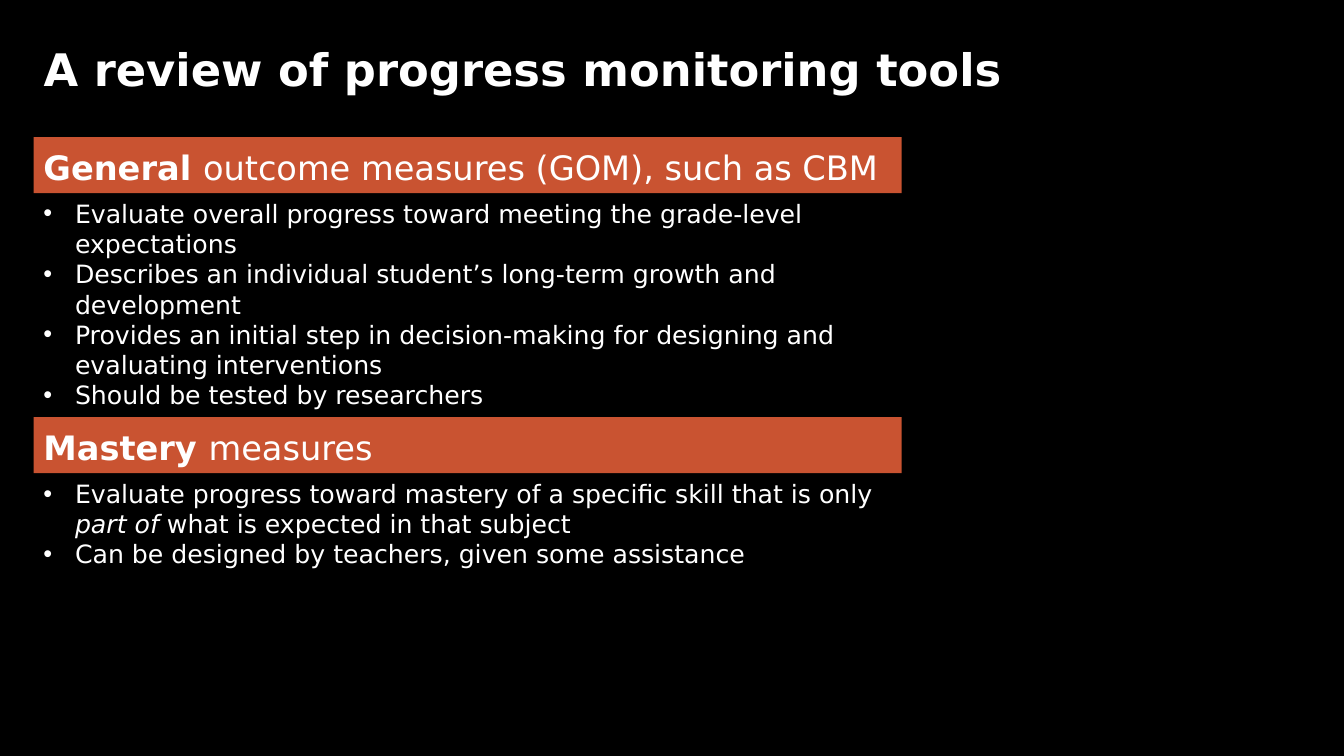
import pptx
import pptx.dml.color
import pptx.enum.shapes
import pptx.enum.text
import pptx.oxml.ns
import pptx.util
from lxml import etree

Pt = pptx.util.Pt
ANCHOR = pptx.enum.text.MSO_ANCHOR

FONT = "DejaVu Sans"
WHITE, BLACK, RUST = "FFFFFF", "000000", "C95331"
LEFT = 24
SECTION_WIDTH = 620
HEADING_HEIGHT = 40
BULLET_INDENT = 22.5

# Each section: heading, height of its bullet list, bullets.
# A text is a list of (words, style) runs.
SECTIONS = [
    ([("General ", "bold"), ("outcome measures (GOM), such as CBM", "")], 160, [
        [("Evaluate overall progress toward meeting the grade-level expectations", "")],
        [("Describes an individual student’s long-term growth and development", "")],
        [("Provides an initial step in decision-making for designing and evaluating interventions", "")],
        [("Should be tested by researchers", "")],
    ]),
    ([("Mastery ", "bold"), ("measures", "")], 73, [
        [("Evaluate progress toward mastery of a specific skill that is only ", ""),
         ("part of ", "italic"), ("what is expected in that subject", "")],
        [("Can be designed by teachers, given some assistance", "")],
    ]),
]


def color(hex_string):
    return pptx.dml.color.RGBColor.from_string(hex_string)


def add_bullet(paragraph):
    properties = paragraph._p.get_or_add_pPr()
    properties.set("marL", str(Pt(BULLET_INDENT)))
    properties.set("indent", str(-Pt(BULLET_INDENT)))
    for tag, name, value in (("a:buFont", "typeface", "Arial"), ("a:buChar", "char", "•")):
        etree.SubElement(properties, pptx.oxml.ns.qn(tag)).set(name, value)


def write_text(shape, paragraphs, size, anchor=ANCHOR.MIDDLE, line_spacing=None, bullets=False):
    frame = shape.text_frame
    frame.word_wrap = True
    frame.vertical_anchor = anchor
    for index, runs in enumerate(paragraphs):
        paragraph = frame.paragraphs[0] if index == 0 else frame.add_paragraph()
        paragraph.alignment = pptx.enum.text.PP_ALIGN.LEFT
        if line_spacing:
            paragraph.line_spacing = line_spacing
        if bullets:
            add_bullet(paragraph)
        for words, style in runs:
            run = paragraph.add_run()
            run.text = words
            run.font.name = FONT
            run.font.size = Pt(size)
            run.font.color.rgb = color(WHITE)
            run.font.bold = style == "bold"
            run.font.italic = style == "italic"


def add_title(slide, left, top, width, height):
    title = slide.shapes.add_textbox(Pt(left), Pt(top), Pt(width), Pt(height))
    write_text(title, [[("A review of progress monitoring tools", "bold")]], 32, line_spacing=1.1)


def add_section(slide, left, top, width, heading, list_height, bullets):
    # Heading bar
    bar = slide.shapes.add_shape(pptx.enum.shapes.MSO_SHAPE.RECTANGLE,
                                 Pt(left), Pt(top), Pt(width), Pt(HEADING_HEIGHT))
    bar.shadow.inherit = False
    bar.fill.solid()
    bar.fill.fore_color.rgb = color(RUST)
    bar.line.fill.background()
    write_text(bar, [heading], 24, line_spacing=1.1)

    # Bullet list directly below the bar
    bullet_list = slide.shapes.add_textbox(Pt(left), Pt(top + HEADING_HEIGHT),
                                           Pt(width), Pt(list_height))
    write_text(bullet_list, bullets, 18, anchor=ANCHOR.TOP, bullets=True)
    bullet_list.text_frame.auto_size = pptx.enum.text.MSO_AUTO_SIZE.SHAPE_TO_FIT_TEXT


def main():
    presentation = pptx.Presentation()
    presentation.slide_width = Pt(960)
    presentation.slide_height = Pt(540)
    slide = presentation.slides.add_slide(presentation.slide_layouts[6])
    slide.background.fill.solid()
    slide.background.fill.fore_color.rgb = color(BLACK)

    add_title(slide, LEFT, 18, 912, 57.6)

    # Sections stacked without gaps
    top = 98
    for heading, list_height, bullets in SECTIONS:
        add_section(slide, LEFT, top, SECTION_WIDTH, heading, list_height, bullets)
        top += HEADING_HEIGHT + list_height

    presentation.save("out.pptx")


if __name__ == "__main__":
    main()
